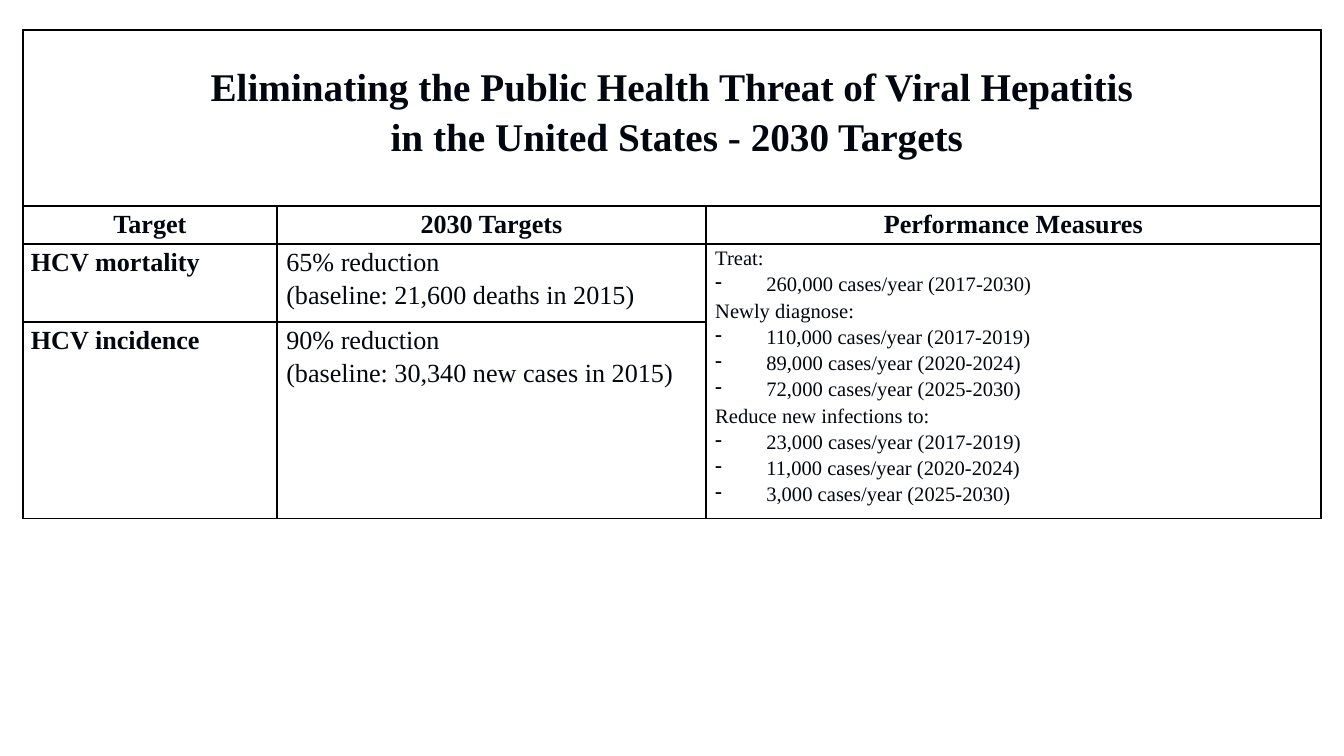
import pptx
import pptx.dml.color
import pptx.enum.text
import pptx.oxml
import pptx.oxml.ns
import pptx.util
from lxml import etree

Pt = pptx.util.Pt
CENTER = pptx.enum.text.PP_ALIGN.CENTER
LEFT = pptx.enum.text.PP_ALIGN.LEFT
COLORS = {"text": "01060F", "border": "000000"}
COLUMN_WIDTHS = [136.1, 229.8, 329.6]
ROW_HEIGHTS = [94.3, 20.2, 41.8, 105.4]
TITLE = [
    "Eliminating the Public Health Threat of Viral Hepatitis",
    " in the United States - 2030 Targets",
]
HEADERS = ["Target", "2030 Targets", "Performance Measures"]
TARGETS = [
    ("HCV mortality", ["65% reduction", "(baseline: 21,600 deaths in 2015)"]),
    ("HCV incidence", ["90% reduction", "(baseline: 30,340 new cases in 2015)"]),
]
MEASURES = {
    "Treat:": ["260,000 cases/year (2017-2030)"],
    "Newly diagnose:": [
        "110,000 cases/year (2017-2019)",
        "89,000 cases/year (2020-2024)",
        "72,000 cases/year (2025-2030)",
    ],
    "Reduce new infections to:": [
        "23,000 cases/year (2017-2019)",
        "11,000 cases/year (2020-2024)",
        "3,000 cases/year (2025-2030)",
    ],
}


class SlideBuilder:
    font_name = "Times New Roman"
    line_spacing = 1.15
    border_width = 1
    bullet_indent = 27.36

    def __init__(self, slide):
        self.slide = slide

    def add_table(self, left, top, column_widths, row_heights):
        """Add an unfilled table with a border round every cell."""
        table = self.slide.shapes.add_table(
            len(row_heights), len(column_widths), Pt(left), Pt(top),
            Pt(sum(column_widths)), Pt(sum(row_heights)),
        ).table
        table.first_row = False
        table.horz_banding = False
        for column, width in zip(table.columns, column_widths):
            column.width = Pt(width)
        for row, height in zip(table.rows, row_heights):
            row.height = Pt(height)
        for cell in table.iter_cells():
            self.add_borders(cell)
            cell.fill.background()
        return table

    def add_borders(self, cell):
        properties = cell._tc.get_or_add_tcPr()
        for side in ("lnL", "lnR", "lnT", "lnB"):
            properties.append(pptx.oxml.parse_xml(
                f'<a:{side} {pptx.oxml.ns.nsdecls("a")} w="{Pt(self.border_width)}">'
                f'<a:solidFill><a:srgbClr val="{COLORS["border"]}"/></a:solidFill>'
                f'</a:{side}>'
            ))

    def fill_cell(self, cell, lines, size=14, bold=False, alignment=LEFT,
                  margin=5, top_margin=0, bulleted=()):
        """Write one paragraph per line; bulleted holds the lines with a dash."""
        cell.margin_left = cell.margin_right = Pt(margin)
        cell.margin_top = Pt(top_margin)
        cell.margin_bottom = Pt(0)
        text_frame = cell.text_frame
        for index, line in enumerate(lines):
            paragraph = text_frame.add_paragraph() if index else text_frame.paragraphs[0]
            paragraph.alignment = alignment
            paragraph.line_spacing = self.line_spacing
            if line in bulleted:
                self.add_bullet(paragraph)
            run = paragraph.add_run()
            run.text = line
            run.font.name = self.font_name
            run.font.size = Pt(size)
            run.font.bold = bold
            run.font.color.rgb = pptx.dml.color.RGBColor.from_string(COLORS["text"])

    def add_bullet(self, paragraph):
        properties = paragraph._p.get_or_add_pPr()
        properties.set("marL", str(Pt(self.bullet_indent)))
        properties.set("indent", str(-Pt(self.bullet_indent)))
        bullet = etree.SubElement(properties, pptx.oxml.ns.qn("a:buChar"))
        bullet.set("char", "-")


def main():
    presentation = pptx.Presentation()
    presentation.slide_width = Pt(720)
    presentation.slide_height = Pt(405)
    slide = presentation.slides.add_slide(presentation.slide_layouts[6])
    builder = SlideBuilder(slide)

    table = builder.add_table(12.3, 16.2, COLUMN_WIDTHS, ROW_HEIGHTS)
    table.cell(0, 0).merge(table.cell(0, 2))
    table.cell(2, 2).merge(table.cell(3, 2))

    builder.fill_cell(table.cell(0, 0), TITLE, size=21, bold=True,
                      alignment=CENTER, top_margin=16)
    for column, header in enumerate(HEADERS):
        builder.fill_cell(table.cell(1, column), [header], bold=True, alignment=CENTER)
    for row, (target, goal) in enumerate(TARGETS, start=2):
        builder.fill_cell(table.cell(row, 0), [target], bold=True, margin=4.2)
        builder.fill_cell(table.cell(row, 1), goal)

    lines = []
    bulleted = []
    for heading, cases in MEASURES.items():
        lines += [heading, *cases]
        bulleted += cases
    builder.fill_cell(table.cell(2, 2), lines, size=11, bulleted=bulleted)

    presentation.save("out.pptx")


if __name__ == "__main__":
    main()
